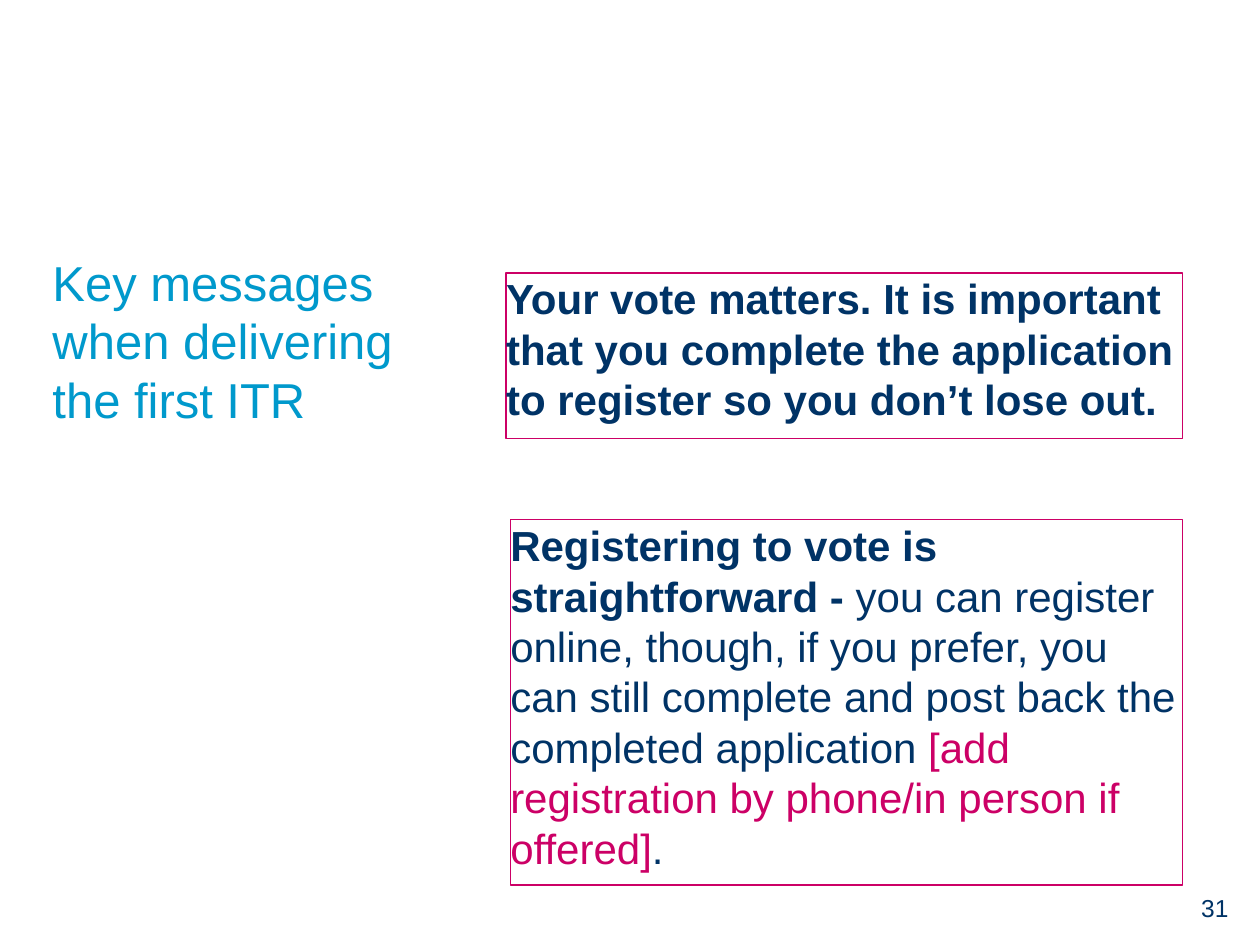
from dataclasses import dataclass
from typing import NamedTuple

from pptx import Presentation
from pptx.dml.color import RGBColor as Rgb
from pptx.enum.shapes import MSO_SHAPE as Shape
from pptx.enum.text import MSO_ANCHOR as Anchor, PP_ALIGN as Align
from pptx.util import Inches, Pt


@dataclass(frozen=True)
class Theme:
    font: str = "Arial"
    navy: str = "003366"
    blue: str = "0099CC"
    pink: str = "CC0066"
    head: int = 28
    body: int = 24
    foot: int = 14
    line: float = 0.75


class Run(NamedTuple):
    text: str
    color: str
    bold: bool = False


class Area(NamedTuple):
    col: float
    row: float
    cols: float
    rows: float


class Card(NamedTuple):
    area: Area
    runs: list[Run]


THEME = Theme()
CELL = Inches(1) / 12
COLS, ROWS = 120, 90
RIGHT = 112.6


def place(area: Area) -> list[int]:
    return [round(part * CELL) for part in area]


def write(shape, runs: list[Run], *, size: int, align=Align.LEFT) -> None:
    frame = shape.text_frame
    frame.word_wrap = True
    frame.vertical_anchor = Anchor.TOP
    frame.margin_left = frame.margin_right = 0
    frame.margin_top = frame.margin_bottom = 0
    para = frame.paragraphs[0]
    para.alignment = align
    for item in runs:
        run = para.add_run()
        run.text = item.text
        run.font.name = THEME.font
        run.font.size = Pt(size)
        run.font.bold = item.bold
        run.font.color.rgb = Rgb.from_string(item.color)


def label(slide, area: Area, run: Run, size: int, align=Align.LEFT) -> None:
    write(slide.shapes.add_textbox(*place(area)), [run], size=size, align=align)


def draw(slide, card: Card) -> None:
    box = slide.shapes.add_shape(Shape.RECTANGLE, *place(card.area))
    box.shadow.inherit = False
    box.fill.background()
    box.line.color.rgb = Rgb.from_string(THEME.pink)
    box.line.width = Pt(THEME.line)
    write(box, card.runs, size=THEME.body)


CARDS = [
    Card(Area(48.6, 49.5, RIGHT - 48.6, 34.8), [
        Run("Registering to vote is straightforward - ", THEME.navy, True),
        Run("you can register online, though, if you prefer, you can still "
            "complete and post back the completed application ", THEME.navy),
        Run("[add registration by phone/in person if offered]", THEME.pink),
        Run(".", THEME.navy),
    ]),
    Card(Area(48.2, 26, RIGHT - 48.2, 15.8), [
        Run("Your vote matters. It is important that you complete the "
            "application to register so you don’t lose out.", THEME.navy, True),
    ]),
]


def main() -> None:
    deck = Presentation()
    deck.slide_width = round(COLS * CELL)
    deck.slide_height = round(ROWS * CELL)
    slide = deck.slides.add_slide(deck.slide_layouts[6])
    label(slide, Area(5, 24, 33, 56),
          Run("Key messages when delivering the first ITR", THEME.blue), THEME.head)
    label(slide, Area(92, 85, 25, 3), Run("31", THEME.navy), THEME.foot, Align.RIGHT)
    for card in CARDS:
        draw(slide, card)
    deck.save("out.pptx")


if __name__ == "__main__":
    main()
